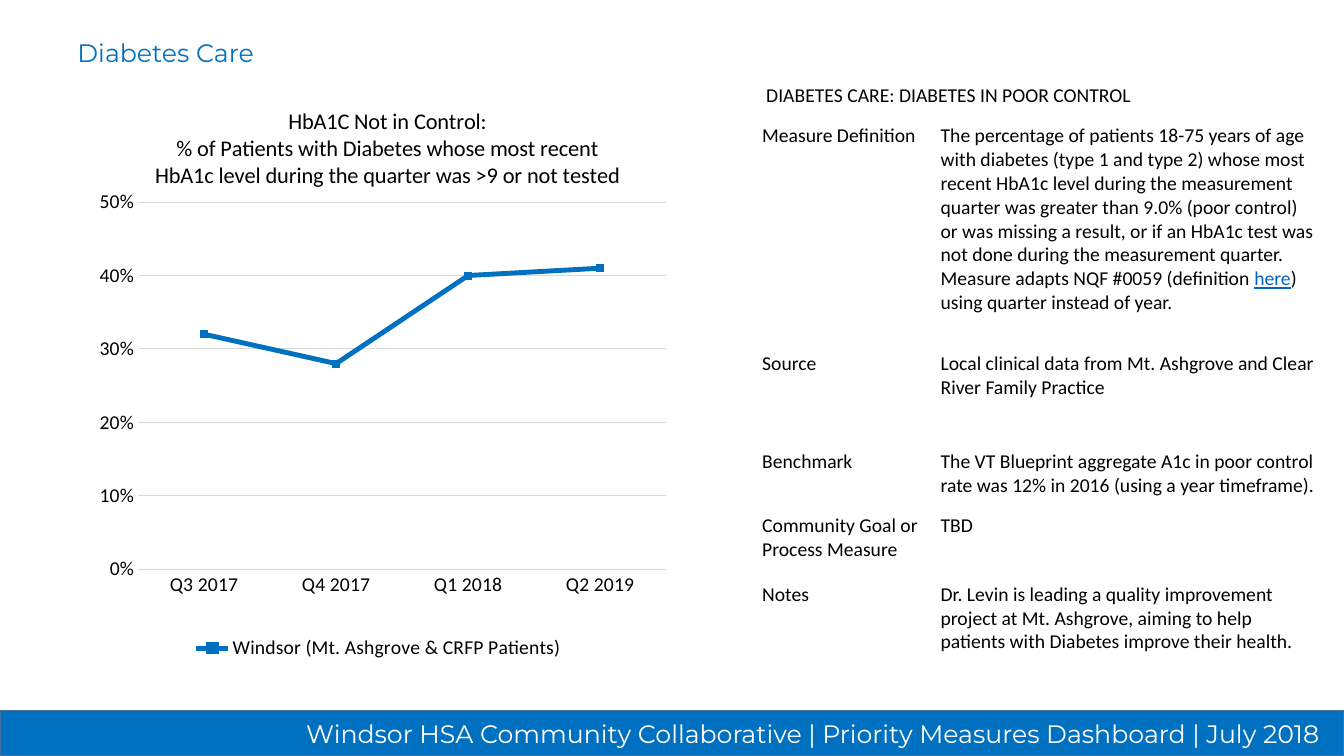
from lxml.etree import SubElement
from pptx import Presentation
from pptx.chart.data import CategoryChartData
from pptx.dml.color import RGBColor
from pptx.enum.chart import XL_CHART_TYPE, XL_LEGEND_POSITION, XL_TICK_MARK
from pptx.enum.shapes import MSO_SHAPE
from pptx.enum.text import MSO_ANCHOR, PP_ALIGN
from pptx.oxml.ns import qn
from pptx.util import Inches, Pt

BLUE, BLACK, GRID, LINK, EDGE = "0070C0", "000000", "D9D9D9", "0563C1", "43739E"
HEADING = "Diabetes Care"
FOOTER = "Windsor HSA Community Collaborative | Priority Measures Dashboard | July 2018"
CHART_TITLE = [
    "HbA1C Not in Control:",
    "% of Patients with Diabetes whose most recent",
    "HbA1c level during the quarter was >9 or not tested",
]
QUARTERS = ["Q3 2017", "Q4 2017", "Q1 2018", "Q2 2019"]
SERIES = ("Windsor (Mt. Ashgrove & CRFP Patients)", [0.32, 0.28, 0.40, 0.41])
TABLE_TITLE = "DIABETES CARE: DIABETES IN POOR CONTROL"
TITLE_HEIGHT = 0.4
COLUMN_WIDTHS = [1.77, 3.94]
MEASURES = [
    (2.26, ["Measure Definition"], [
        "The percentage of patients 18-75 years of age with diabetes (type 1 and type 2) "
        "whose most recent HbA1c level during the measurement quarter was greater than "
        "9.0% (poor control) or was missing a result, or if an HbA1c test was not done "
        "during the measurement quarter. Measure adapts NQF #0059 (definition ",
        "here", ") using quarter instead of year."]),
    (0.97, ["Source"], ["Local clinical data from Mt. Ashgrove and Clear River Family Practice"]),
    (0.64, ["Benchmark"], ["The VT Blueprint aggregate A1c in poor control rate was 12% in 2016 "
                           "(using a year timeframe)."]),
    (0.68, ["Community Goal or", "Process Measure"], ["TBD"]),
    (1.25, ["Notes"], ["Dr. Levin is leading a quality improvement project at Mt. Ashgrove, "
                       "aiming to help patients with Diabetes improve their health."]),
]


def color(value):
    return RGBColor.from_string(value)


def style(font, size, shade=BLACK, name="Calibri"):
    font.size, font.name, font.bold = Pt(size), name, False
    font.color.rgb = color(shade)


def set_line(line, shade, width):
    line.color.rgb = color(shade)
    line.width = Pt(width)


def place(element, **settings):
    layout = element.find(qn("c:layout"))
    if layout is None:
        layout = SubElement(element, qn("c:layout"))
        element.insert(1 if element.tag == qn("c:title") else 0, layout)
    manual = SubElement(layout, qn("c:manualLayout"))
    for name, value in settings.items():
        SubElement(manual, qn("c:" + name)).set("val", str(value))


def add_trend(page):
    data = CategoryChartData(number_format="0%")
    data.categories = QUARTERS
    data.add_series(*SERIES)
    chart = page.shapes.add_chart(XL_CHART_TYPE.LINE, Inches(0.72), Inches(0.91),
                                  Inches(6.07), Inches(5.68), data).chart
    style(chart.font, 14)
    frame = chart.chart_title.text_frame
    for index, text in enumerate(CHART_TITLE):
        para = frame.add_paragraph() if index else frame.paragraphs[0]
        para.text = text
        style(para.font, 16)
    chart.chart_title.include_in_layout = False
    chart.has_legend = True
    chart.legend.position = XL_LEGEND_POSITION.BOTTOM
    chart.legend.include_in_layout = False
    style(chart.legend.font, 14)

    for axis in (chart.category_axis, chart.value_axis):
        axis.major_tick_mark = axis.minor_tick_mark = XL_TICK_MARK.NONE
        style(axis.tick_labels.font, 14)
    set_line(chart.category_axis.format.line, GRID, 0.75)
    values = chart.value_axis
    values.minimum_scale, values.maximum_scale, values.major_unit = 0, 0.5, 0.1
    values.tick_labels.number_format = "0%"
    values.tick_labels.number_format_is_linked = False
    values.format.line.fill.background()
    set_line(values.major_gridlines.format.line, GRID, 0.75)

    plot = chart.plots[0]
    plot.vary_by_categories = False
    trend = plot.series[0]
    trend.smooth = False
    trend.marker.style = None
    set_line(trend.format.line, BLUE, 3.5)
    area = chart.element.find(".//" + qn("c:plotArea"))
    place(area, layoutTarget="inner", xMode="edge", yMode="edge",
          x=0.107, y=0.193, w=0.863, h=0.641)
    place(chart.element.find(".//" + qn("c:title")), xMode="edge", yMode="edge", x=0.13, y=0.02)


def add_measures(page):
    heights = [TITLE_HEIGHT] + [row[0] for row in MEASURES]
    table = page.shapes.add_table(len(heights), 2, Inches(7.46), Inches(0.78),
                                  Inches(sum(COLUMN_WIDTHS)), Inches(sum(heights))).table
    table.first_row = table.horz_banding = False
    for column, width in zip(table.columns, COLUMN_WIDTHS):
        column.width = Inches(width)
    for row, height in zip(table.rows, heights):
        row.height = Inches(height)
    table.cell(0, 0).merge(table.cell(0, 1))
    table.cell(0, 0).text = TABLE_TITLE
    table.cell(0, 0).margin_left = Inches(0.14)
    for index, (height, label, details) in enumerate(MEASURES, 1):
        table.cell(index, 0).text = "\n".join(label)
        para = table.cell(index, 1).text_frame.paragraphs[0]
        for text in details:
            span = para.add_run()
            span.text = text
            if text == "here":
                span.font.underline = True
                span.font.color.rgb = color(LINK)
    for cell in table.iter_cells():
        cell.fill.background()
        for para in cell.text_frame.paragraphs:
            style(para.font, 14)


def add_heading(page):
    box = page.shapes.add_textbox(Inches(0.67), Inches(0.32), Inches(8.23), Inches(0.4))
    box.text_frame.word_wrap = True
    para = box.text_frame.paragraphs[0]
    para.text = HEADING
    style(para.font, 18, BLUE, "Montserrat")


def add_footer(page):
    bar = page.shapes.add_shape(MSO_SHAPE.RECTANGLE, 0, Inches(7.05), Inches(13.33), Inches(0.45))
    bar.shadow.inherit = False
    bar.fill.solid()
    bar.fill.fore_color.rgb = color(BLUE)
    set_line(bar.line, EDGE, 1)
    frame = bar.text_frame
    frame.word_wrap = True
    frame.vertical_anchor = MSO_ANCHOR.MIDDLE
    frame.margin_right = Inches(0.24)
    para = frame.paragraphs[0]
    para.text = FOOTER
    para.alignment = PP_ALIGN.RIGHT
    style(para.font, 18, "FFFFFF", "Montserrat")


def main():
    deck = Presentation()
    deck.slide_width, deck.slide_height = Inches(13.33), Inches(7.5)
    page = deck.slides.add_slide(deck.slide_layouts[6])
    add_trend(page)
    add_heading(page)
    add_measures(page)
    add_footer(page)
    deck.save("out.pptx")


if __name__ == "__main__":
    main()
